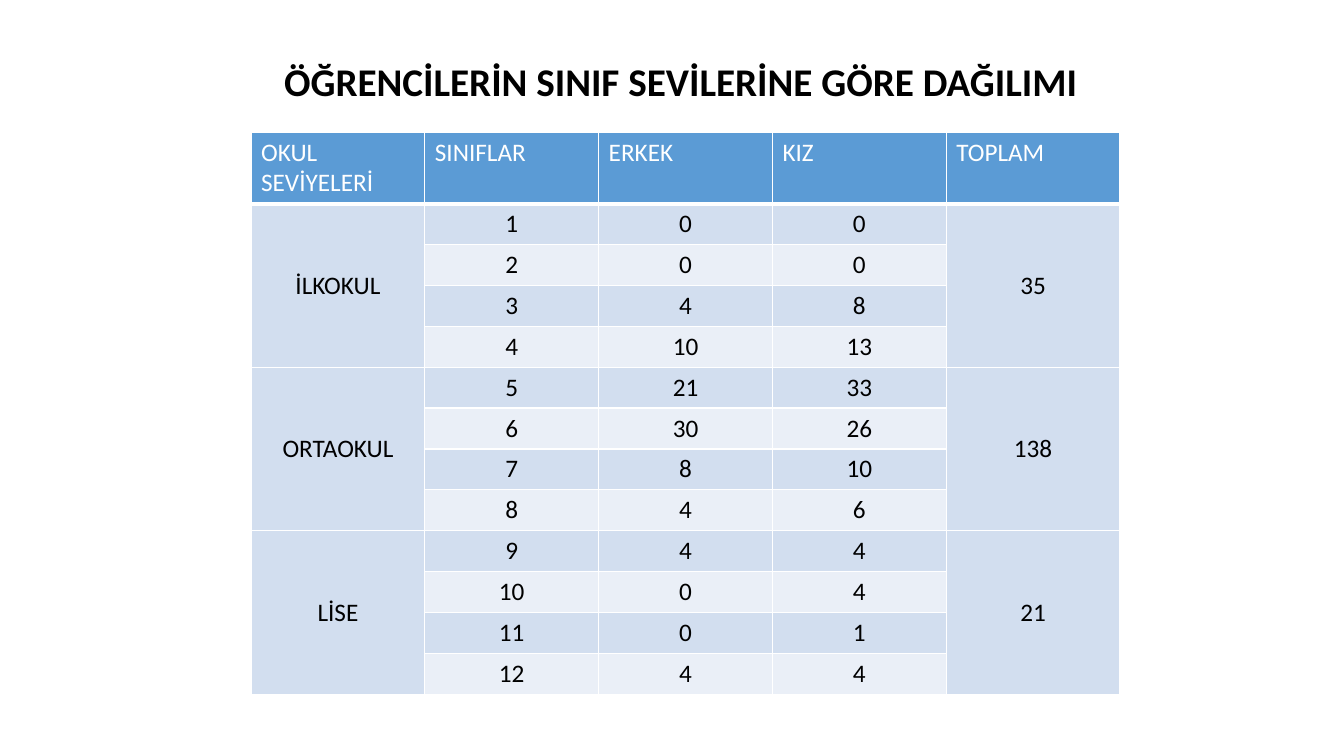
"""Build a slide with a table of students by school level, class and gender."""
import pptx
import pptx.dml.color
import pptx.enum.text
import pptx.oxml
import pptx.oxml.ns
import pptx.util

TITLE = "ÖĞRENCİLERİN SINIF SEVİLERİNE GÖRE DAĞILIMI"
HEADINGS = ["OKUL SEVİYELERİ", "SINIFLAR", "ERKEK", "KIZ", "TOPLAM"]
LEVELS = [
    ("İLKOKUL", [(1, 0, 0), (2, 0, 0), (3, 4, 8), (4, 10, 13)], 35),
    ("ORTAOKUL", [(5, 21, 33), (6, 30, 26), (7, 8, 10), (8, 4, 6)], 138),
    ("LİSE", [(9, 4, 4), (10, 0, 4), (11, 0, 1), (12, 4, 4)], 21),
]
THEME = {
    "font": "Calibri", "title_size": 28, "table_size": 18,
    "ink": "000000", "paper": "FFFFFF", "heading": "5B9BD5",
    "bands": ["D2DEEF", "EAEFF7"], "rule": 1, "heading_rule": 3,
}
SLIDE_WIDTH, SLIDE_HEIGHT = 13.33, 7.5
TABLE_LEFT, TABLE_TOP, TABLE_WIDTH = 2.49, 1.31, 8.62
HEADING_HEIGHT, ROW_HEIGHT = 0.7, 0.4
TITLE_BOX = (2.72, 0.52, 8.16, 0.57)

Inches = pptx.util.Inches
PP_ALIGN = pptx.enum.text.PP_ALIGN
MIDDLE = pptx.enum.text.MSO_ANCHOR.MIDDLE


def rgb(code):
    return pptx.dml.color.RGBColor.from_string(code)


def write(frame, text, size=THEME["table_size"], color=THEME["ink"], bold=False, align=PP_ALIGN.CENTER):
    paragraph = frame.paragraphs[0]
    paragraph.alignment = align
    run = paragraph.add_run()
    run.text = str(text)
    run.font.name, run.font.size, run.font.bold = THEME["font"], pptx.util.Pt(size), bold
    run.font.color.rgb = rgb(color)


def paint(cell, fill, top=THEME["rule"], bottom=THEME["rule"]):
    cell.fill.solid()
    cell.fill.fore_color.rgb = rgb(fill)
    properties = cell._tc.get_or_add_tcPr()
    sides = {"lnL": THEME["rule"], "lnR": THEME["rule"], "lnT": top, "lnB": bottom}
    for position, (side, width) in enumerate(sides.items()):
        properties.insert(position, pptx.oxml.parse_xml(
            f'<a:{side} {pptx.oxml.ns.nsdecls("a")} w="{pptx.util.Pt(width)}"><a:solidFill>'
            f'<a:srgbClr val="{THEME["paper"]}"/></a:solidFill></a:{side}>'))


def add_title(slide):
    frame = slide.shapes.add_textbox(*map(Inches, TITLE_BOX)).text_frame
    frame.word_wrap = False
    frame.auto_size = pptx.enum.text.MSO_AUTO_SIZE.SHAPE_TO_FIT_TEXT
    write(frame, TITLE, size=THEME["title_size"], bold=True, align=PP_ALIGN.LEFT)


def add_students(slide):
    class_count = sum(len(classes) for _, classes, _ in LEVELS)
    last = len(HEADINGS) - 1
    table = slide.shapes.add_table(
        class_count + 1, len(HEADINGS), Inches(TABLE_LEFT), Inches(TABLE_TOP),
        Inches(TABLE_WIDTH), Inches(HEADING_HEIGHT + class_count * ROW_HEIGHT)).table
    table.first_row = table.horz_banding = False
    for index, row in enumerate(table.rows):
        row.height = Inches(ROW_HEIGHT if index else HEADING_HEIGHT)

    for column, heading in enumerate(HEADINGS):
        cell = table.cell(0, column)
        paint(cell, THEME["heading"], bottom=THEME["heading_rule"])
        write(cell.text_frame, heading, color=THEME["paper"], align=PP_ALIGN.LEFT)

    first = 1
    for level, classes, total in LEVELS:
        for row, counts in enumerate(classes, first):
            top = THEME["heading_rule"] if row == 1 else THEME["rule"]
            for column in range(len(HEADINGS)):
                band = 0 if column in (0, last) else (row - first) % 2
                paint(table.cell(row, column), THEME["bands"][band], top=top)
            for column, count in enumerate(counts, 1):
                write(table.cell(row, column).text_frame, count)
        for column, label in ((0, level), (last, total)):
            cell = table.cell(first, column)
            cell.merge(table.cell(first + len(classes) - 1, column))
            cell.vertical_anchor = MIDDLE
            write(cell.text_frame, label)
        first += len(classes)


def main():
    deck = pptx.Presentation()
    deck.slide_width, deck.slide_height = Inches(SLIDE_WIDTH), Inches(SLIDE_HEIGHT)
    slide = deck.slides.add_slide(deck.slide_layouts[6])
    add_students(slide)
    add_title(slide)
    deck.save("out.pptx")


if __name__ == "__main__":
    main()
